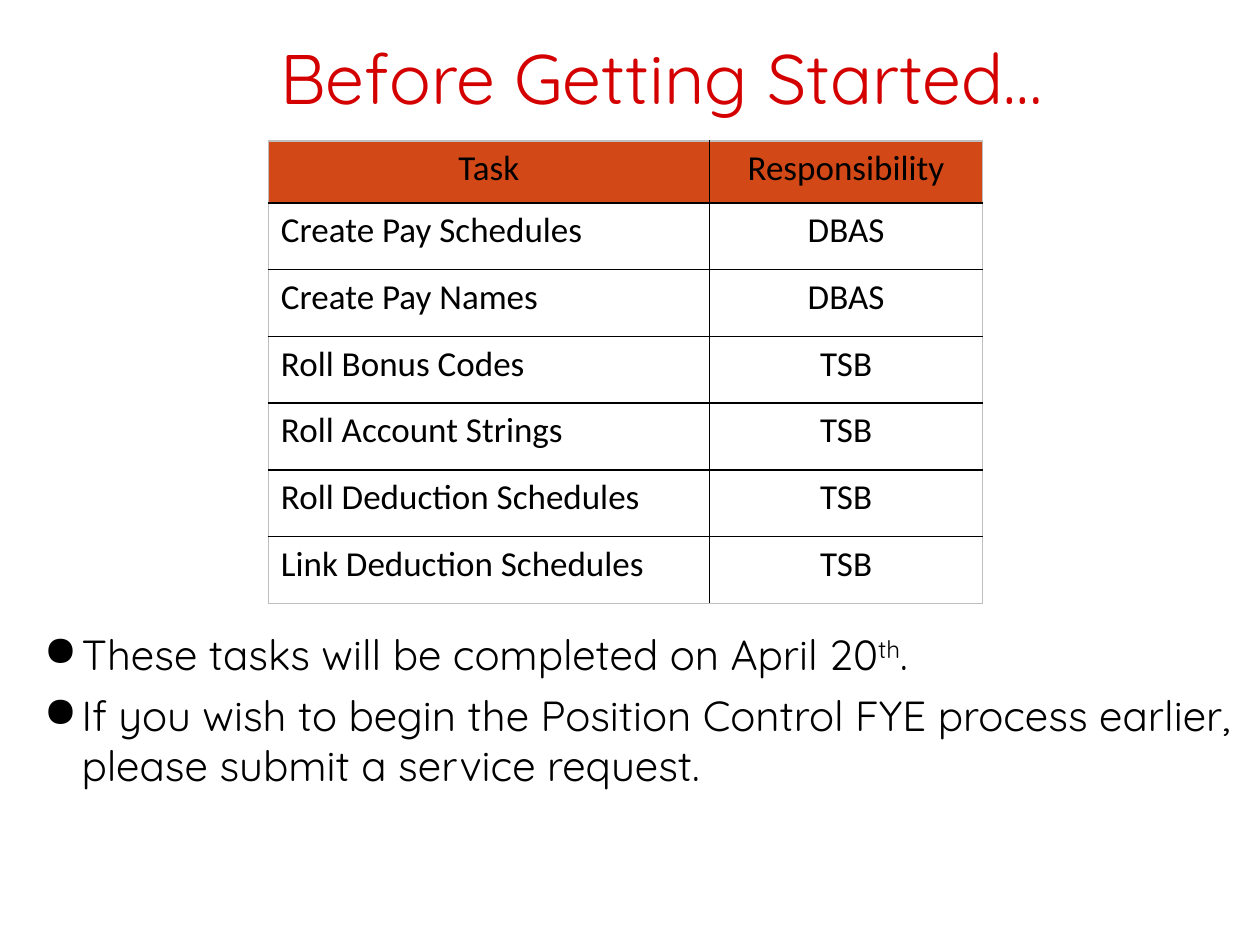
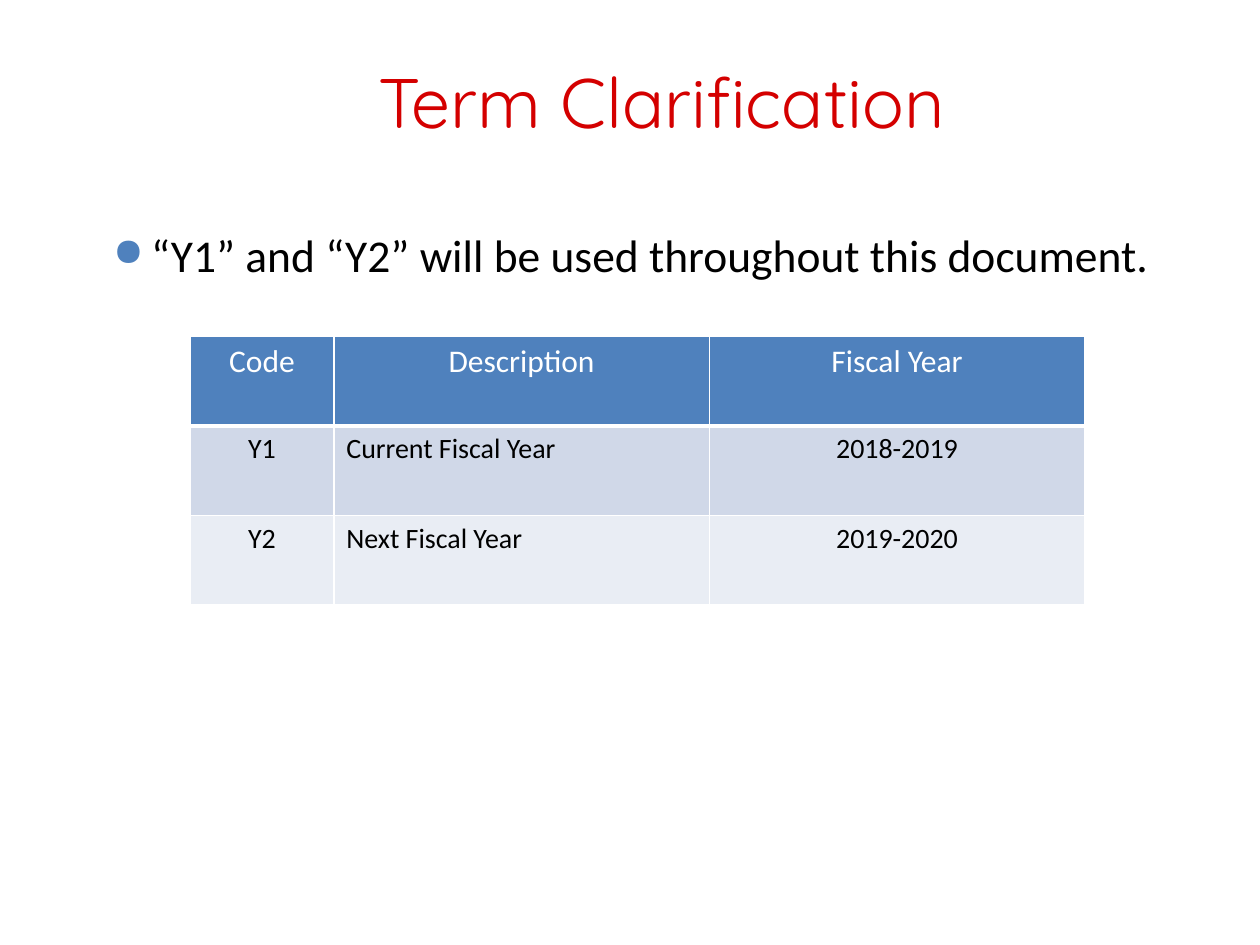
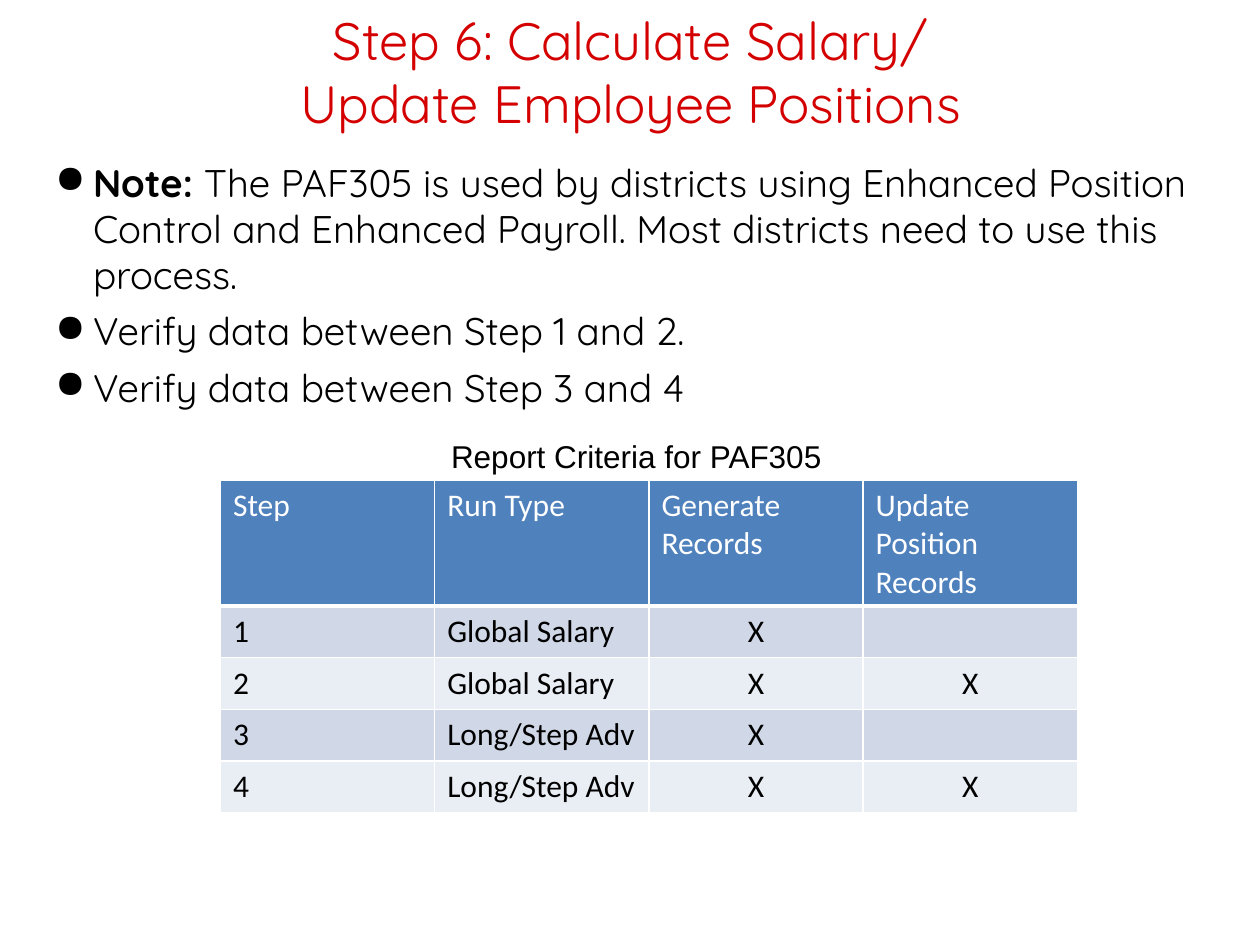
from dataclasses import dataclass
from typing import NamedTuple

from lxml.etree import SubElement
from pptx import Presentation
from pptx.dml.color import RGBColor
from pptx.enum.text import MSO_ANCHOR as Anchor, MSO_AUTO_SIZE as AutoSize, PP_ALIGN as Align
from pptx.oxml import parse_xml
from pptx.oxml.ns import nsdecls, qn
from pptx.util import Emu, Pt

# Shared scale, colours and fonts
EMU_PER_PX = 9144  # 100 px to the inch
RED, BLACK, WHITE, GREY = "D40000", "000000", "FFFFFF", "BFBFBF"
ORANGE, BLUE, BAND_DARK, BAND_LIGHT = "D34817", "4F81BD", "D0D8E8", "E9EDF4"
DISPLAY, BODY, CAPTION = "Quicksand", "Calibri", "Arial"
LEFT, CENTER = Align.LEFT, Align.CENTER
BULLET_INDENT = 30
BULLET_GAP = 5.8


class Area(NamedTuple):
    left: int
    top: int
    width: int
    height: int


class Span(NamedTuple):
    text: str
    bold: bool = False
    superscript: bool = False


@dataclass
class Bullets:
    area: Area
    items: list[list[Span]]
    size: int
    font: str = DISPLAY
    mark_color: str = ""
    mark_percent: int = 100


@dataclass
class TableStyle:
    header_fill: str
    header_color: str
    bands: tuple[str, ...]
    inner_line: str
    outer_line: str
    header_rule: int


@dataclass
class Grid:
    left: int
    top: int
    columns: list[int]
    header_height: int
    row_height: int
    header_size: int
    body_size: int
    header_align: Align
    aligns: list[Align]
    rows: list[list[str]]
    style: TableStyle


OUTLINED = TableStyle(ORANGE, BLACK, (), BLACK, GREY, 1)
BANDED = TableStyle(BLUE, WHITE, (BAND_DARK, BAND_LIGHT), WHITE, WHITE, 3)


def px(length: int) -> Emu:
    return Emu(length * EMU_PER_PX)


def rgb(value: str) -> RGBColor:
    return RGBColor.from_string(value)


def format_runs(para, font: str, size: int, color: str) -> None:
    for run in para.runs:
        run.font.name, run.font.size = font, Pt(size)
        run.font.color.rgb = rgb(color)


# Text
def add_page(deck, title: str, area: Area, size: int = 40):
    page = deck.slides.add_slide(deck.slide_layouts[5])
    box = page.shapes.title
    box.left, box.top, box.width, box.height = map(px, area)
    frame = box.text_frame
    frame.text = title
    frame.auto_size = AutoSize.NONE
    frame.vertical_anchor = Anchor.MIDDLE
    frame.paragraphs[0].alignment = CENTER
    format_runs(frame.paragraphs[0], DISPLAY, size, RED)
    return page


def add_text_frame(page, area: Area):
    frame = page.shapes.add_textbox(*map(px, area)).text_frame
    frame.word_wrap = True
    return frame


def add_mark(para, bullets: Bullets) -> None:
    props = para._p.get_or_add_pPr()
    props.set("marL", str(px(BULLET_INDENT)))
    props.set("indent", str(-px(BULLET_INDENT)))
    if bullets.mark_color:
        holder = SubElement(props, qn("a:buClr"))
        SubElement(holder, qn("a:srgbClr")).set("val", bullets.mark_color)
    SubElement(props, qn("a:buSzPct")).set("val", str(bullets.mark_percent * 1000))
    SubElement(props, qn("a:buChar")).set("char", "●")


def add_bullets(page, bullets: Bullets) -> None:
    frame = add_text_frame(page, bullets.area)
    for index, spans in enumerate(bullets.items):
        para = frame.add_paragraph() if index else frame.paragraphs[0]
        add_mark(para, bullets)
        if index:
            para.space_before = Pt(BULLET_GAP)
        for span in spans:
            run = para.add_run()
            run.text = span.text
            run.font.bold = span.bold
            if span.superscript:
                run._r.get_or_add_rPr().set("baseline", "30000")
        format_runs(para, bullets.font, bullets.size, BLACK)


def add_caption(page, text: str, area: Area) -> None:
    frame = add_text_frame(page, area)
    frame.text = text
    frame.paragraphs[0].alignment = CENTER
    format_runs(frame.paragraphs[0], CAPTION, 18, BLACK)


# Tables
def set_borders(cell, lines: list[tuple[str, str, int]]) -> None:
    props = cell._tc.get_or_add_tcPr()
    for position, (side, color, width) in enumerate(lines):
        line = parse_xml(
            f'<a:ln{side} {nsdecls("a")} w="{Pt(width)}"><a:solidFill>'
            f'<a:srgbClr val="{color}"/></a:solidFill></a:ln{side}>')
        props.insert(position, line)


def format_cell(cell, grid: Grid, row: int, column: int) -> None:
    style, header = grid.style, row == 0
    if header:
        fill = style.header_fill
    else:
        fill = style.bands[(row - 1) % len(style.bands)] if style.bands else ""
    if fill:
        cell.fill.solid()
        cell.fill.fore_color.rgb = rgb(fill)
    else:
        cell.fill.background()

    outer = {"L": column == 0, "R": column == len(grid.columns) - 1,
             "T": header, "B": row == len(grid.rows) - 1}
    set_borders(cell, [
        (side, style.outer_line if edge else style.inner_line,
         style.header_rule if header and side == "B" else 1)
        for side, edge in outer.items()])

    para = cell.text_frame.paragraphs[0]
    para.alignment = grid.header_align if header else grid.aligns[column]
    format_runs(para, BODY, grid.header_size if header else grid.body_size,
                style.header_color if header else BLACK)


def add_grid(page, grid: Grid) -> None:
    heights = [grid.header_height] + [grid.row_height] * (len(grid.rows) - 1)
    area = Area(grid.left, grid.top, sum(grid.columns), sum(heights))
    table = page.shapes.add_table(
        len(heights), len(grid.columns), *map(px, area)).table
    table.first_row = table.horz_banding = False
    for column, width in zip(table.columns, grid.columns):
        column.width = px(width)
    for row, (height, texts) in enumerate(zip(heights, grid.rows)):
        table.rows[row].height = px(height)
        for column, text in enumerate(texts):
            cell = table.cell(row, column)
            cell.text_frame.text = text
            format_cell(cell, grid, row, column)


# Slides
def add_preparation(deck) -> None:
    page = add_page(deck, "Before Getting Started…", Area(100, -2, 850, 125))
    add_grid(page, Grid(
        213, 112, [350, 217], 49, 53, 20, 20, CENTER, [LEFT, CENTER],
        [["Task", "Responsibility"],
         ["Create Pay Schedules", "DBAS"],
         ["Create Pay Names", "DBAS"],
         ["Roll Bonus Codes", "TSB"],
         ["Roll Account Strings", "TSB"],
         ["Roll Deduction Schedules", "TSB"],
         ["Link Deduction Schedules", "TSB"]], OUTLINED))
    add_bullets(page, Bullets(Area(25, 494, 975, 183), [
        [Span("These tasks will be completed on April 20"),
         Span("th", superscript=True), Span(".")],
        [Span("If you wish to begin the Position Control FYE process earlier, "
              "please submit a service request.")]], 24))


def add_terms(deck) -> None:
    page = add_page(deck, "Term Clarification", Area(100, 17, 850, 125))
    add_grid(page, Grid(
        151, 267, [114, 298, 298], 71, 71, 18, 16, CENTER, [CENTER, LEFT, CENTER],
        [["Code", "Description", "Fiscal Year"],
         ["Y1", "Current Fiscal Year", "2018-2019"],
         ["Y2", "Next Fiscal Year", "2019-2020"]], BANDED))
    add_bullets(page, Bullets(
        Area(80, 175, 975, 100),
        [[Span("“Y1” and “Y2” will be used throughout this document.")]],
        26, BODY, BLUE, 85))


def add_salary_step(deck) -> None:
    page = add_page(deck, "Step 6: Calculate Salary/\vUpdate Employee Positions",
                    Area(17, -6, 967, 125), 30)
    add_bullets(page, Bullets(Area(34, 121, 950, 500), [
        [Span("Note: ", bold=True),
         Span("The PAF305 is used by districts using Enhanced Position Control and "
              "Enhanced Payroll. Most districts need to use this process.")],
        [Span("Verify data between Step 1 and 2.")],
        [Span("Verify data between Step 3 and 4")]], 22))
    add_grid(page, Grid(
        175, 381, [170] * 4, 100, 41, 18, 18, LEFT, [LEFT, LEFT, CENTER, CENTER],
        [["Step", "Run Type", "Generate Records", "Update Position Records"],
         ["1", "Global Salary", "X", ""],
         ["2", "Global Salary", "X", "X"],
         ["3", "Long/Step Adv", "X", ""],
         ["4", "Long/Step Adv", "X", "X"]], BANDED))
    add_caption(page, "Report Criteria for PAF305 ", Area(175, 342, 667, 40))


def main() -> None:
    deck = Presentation()
    deck.slide_width, deck.slide_height = px(1000), px(750)
    add_preparation(deck)
    add_terms(deck)
    add_salary_step(deck)
    deck.save("out.pptx")


if __name__ == "__main__":
    main()
